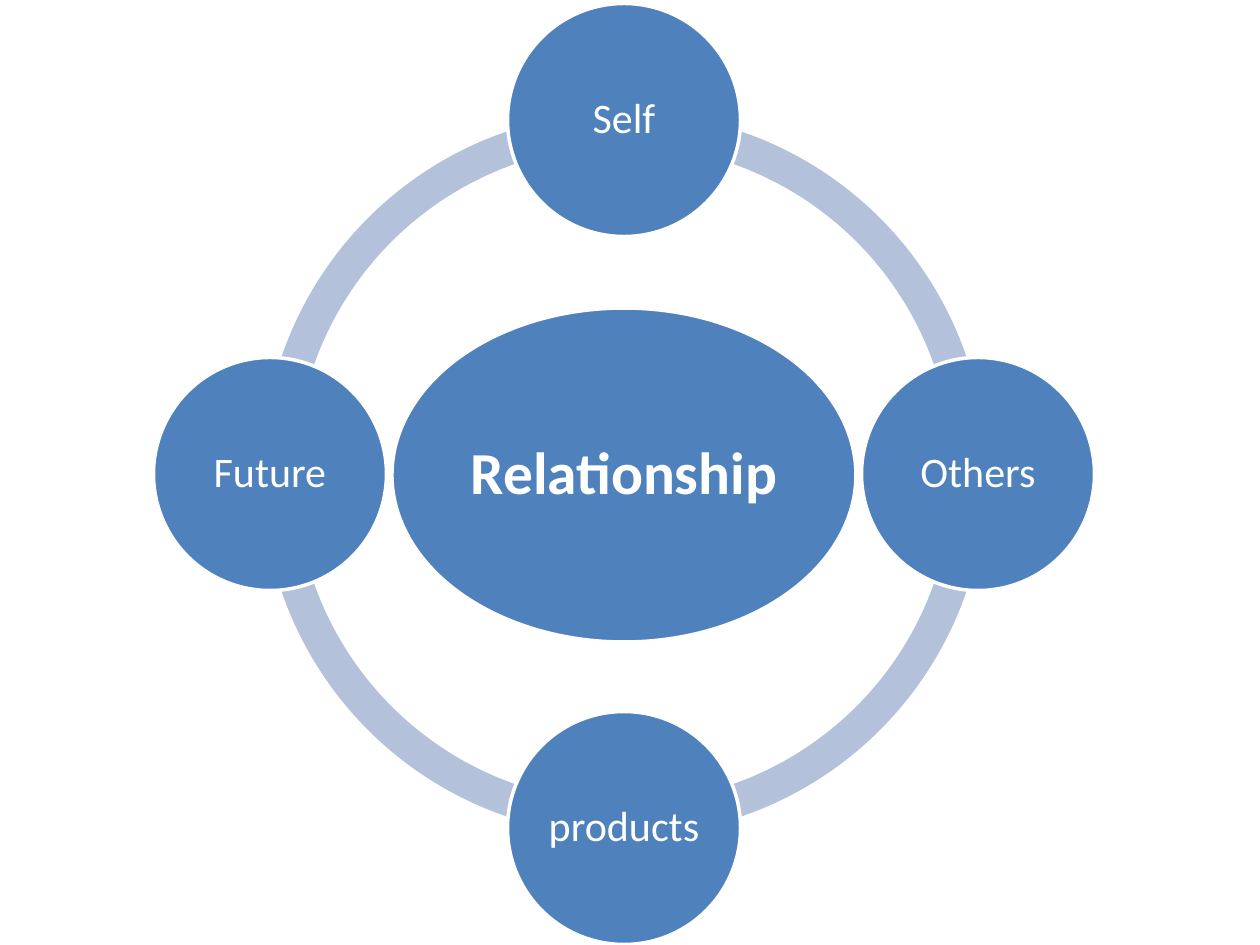
from dataclasses import dataclass

from pptx import Presentation
from pptx.dml.color import RGBColor
from pptx.enum.shapes import MSO_SHAPE
from pptx.enum.text import MSO_ANCHOR, PP_ALIGN
from pptx.util import Pt

# Content: label and direction from the centre (across, down)
HUB = "Relationship"
NODES = [
    ("Self", 0, -1),
    ("Others", 1, 0),
    ("products", 0, 1),
    ("Future", -1, 0),
]

# Layout in px
PX = 914400 / 126
PAGE_WIDTH, PAGE_HEIGHT = 1260, 945
CENTRE_X, CENTRE_Y = 624, 474
ORBIT = 354
RING_SIZE = 724
NODE_SIZE = 233
HUB_WIDTH, HUB_HEIGHT, HUB_DROP = 464, 334, 1
RING_THICKNESS = 0.046
# Block arc adjustments count 0.6 to the degree
QUARTER_TURN, FULL_TURN = 54, 216


@dataclass(frozen=True)
class Theme:
    node: RGBColor = RGBColor(0x4F, 0x81, 0xBD)
    ring: RGBColor = RGBColor(0xB3, 0xC1, 0xDB)
    white: RGBColor = RGBColor(0xFF, 0xFF, 0xFF)
    font: str = "Calibri"
    hub_size: Pt = Pt(34)
    node_size: Pt = Pt(24)
    outline: Pt = Pt(2)


THEME = Theme()


def emu(length):
    return round(length * PX)


def set_values(target, values):
    for name, value in values.items():
        setattr(target, name, value)


def add_centred(page, kind, x, y, width, height, color):
    corner_and_size = (x - width / 2, y - height / 2, width, height)
    shape = page.shapes.add_shape(kind, *map(emu, corner_and_size))
    shape.shadow.inherit = False
    shape.fill.solid()
    shape.fill.fore_color.rgb = color
    return shape


def add_arc(page, start):
    arc = add_centred(page, MSO_SHAPE.BLOCK_ARC, CENTRE_X, CENTRE_Y,
                      RING_SIZE, RING_SIZE, THEME.ring)
    arc.line.fill.background()
    end = (start + QUARTER_TURN) % FULL_TURN
    for index, value in enumerate((start, end, RING_THICKNESS)):
        arc.adjustments[index] = value


def add_bubble(page, label, x, y, width, height, inset, font):
    bubble = add_centred(page, MSO_SHAPE.OVAL, x, y, width, height, THEME.node)
    bubble.line.color.rgb = THEME.white
    bubble.line.width = THEME.outline
    frame = bubble.text_frame
    set_values(frame, {
        "word_wrap": True,
        "vertical_anchor": MSO_ANCHOR.MIDDLE,
        **{f"margin_{side}": emu(inset)
           for side in ("left", "right", "top", "bottom")},
    })
    para = frame.paragraphs[0]
    set_values(para, {"alignment": PP_ALIGN.CENTER, "line_spacing": 0.9})
    span = para.add_run()
    span.text = label
    set_values(span.font, {"name": THEME.font, **font})
    span.font.color.rgb = THEME.white


def main():
    deck = Presentation()
    set_values(deck, {"slide_width": emu(PAGE_WIDTH),
                      "slide_height": emu(PAGE_HEIGHT)})
    page = deck.slides.add_slide(deck.slide_layouts[6])

    # Ring of four quarter arcs
    for quarter in range(4):
        add_arc(page, quarter * QUARTER_TURN)

    # Hub
    add_bubble(page, HUB, CENTRE_X, CENTRE_Y + HUB_DROP, HUB_WIDTH, HUB_HEIGHT,
               6, {"size": THEME.hub_size, "bold": True})

    # Nodes on the ring
    for label, across, down in NODES:
        add_bubble(page, label, CENTRE_X + across * ORBIT,
                   CENTRE_Y + down * ORBIT, NODE_SIZE, NODE_SIZE,
                   4, {"size": THEME.node_size, "bold": False})

    deck.save("out.pptx")


if __name__ == "__main__":
    main()
